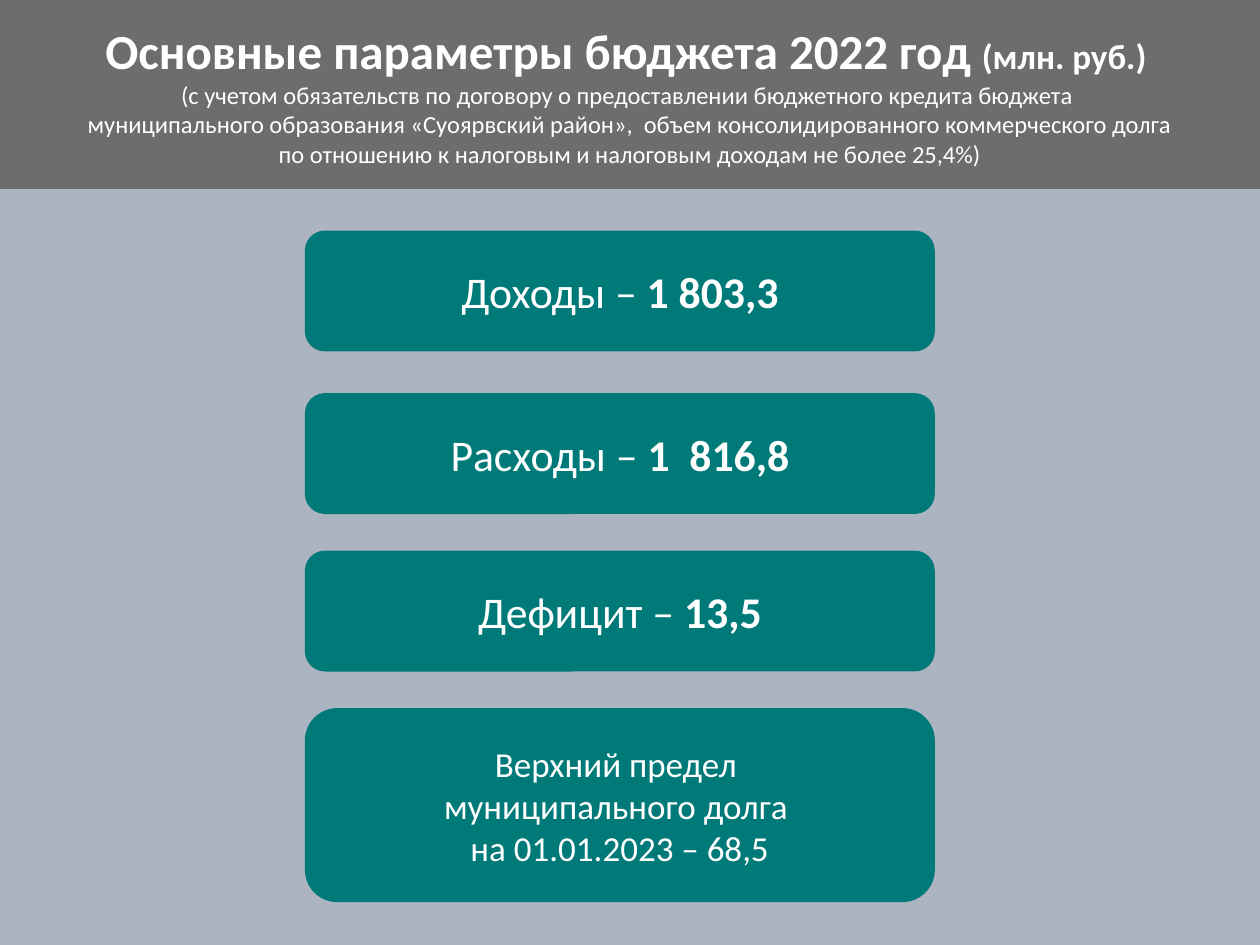
from pptx import Presentation
from pptx.dml.color import RGBColor
from pptx.enum.shapes import MSO_SHAPE
from pptx.enum.text import MSO_ANCHOR, MSO_AUTO_SIZE, PP_ALIGN
from pptx.util import Inches, Pt

FONT = "Calibri"
WHITE, GREY, TEAL, BACKGROUND = "FFFFFF", "6D6D6D", "007979", "ACB3C1"
CARD_LEFT, CARD_WIDTH = 2.42, 5

# Each paragraph is a list of runs: (text, size, bold)
TITLE = [
    [("Основные параметры бюджета 2022 год ", 28, True), ("(млн. руб.) ", 20, True)],
    [("(с учетом обязательств по договору о предоставлении бюджетного кредита бюджета ", 14, False)],
    [(" муниципального образования «Суоярвский район»,  "
      "объем консолидированного коммерческого долга ", 14, False)],
    [("по отношению к налоговым и налоговым доходам не более 25,4%)", 14, False)],
]

# Each card: top, height, paragraphs
CARDS = [
    (1.83, 0.96, [[("Доходы – ", 25, False), ("1 803,3", 25, True)]]),
    (3.12, 0.96, [[("Расходы – ", 25, False), ("1  816,8", 25, True)]]),
    (4.37, 0.96, [[("Дефицит – ", 25, False), ("13,5", 25, True)]]),
    (5.62, 1.54, [
        [("Верхний предел ", 20, False)],
        [("муниципального долга ", 20, False)],
        [("на 01.01.2023 – 68,5", 20, False)],
    ]),
]


def paint(fill, color):
    fill.solid()
    fill.fore_color.rgb = RGBColor.from_string(color)


def write(text_frame, paragraphs):
    text_frame.vertical_anchor = MSO_ANCHOR.MIDDLE
    for index, runs in enumerate(paragraphs):
        paragraph = text_frame.add_paragraph() if index else text_frame.paragraphs[0]
        paragraph.alignment = PP_ALIGN.CENTER
        for text, size, bold in runs:
            run = paragraph.add_run()
            run.text = text
            run.font.name = FONT
            run.font.size = Pt(size)
            run.font.bold = bold
            run.font.color.rgb = RGBColor.from_string(WHITE)


def add_header(slide, width):
    title = slide.shapes.title
    title.left, title.top = 0, 0
    title.width, title.height = width, Inches(1.5)
    paint(title.fill, GREY)
    title.text_frame.auto_size = MSO_AUTO_SIZE.NONE
    title.text_frame.word_wrap = True
    write(title.text_frame, TITLE)


def add_card(slide, top, height, paragraphs):
    card = slide.shapes.add_shape(
        MSO_SHAPE.ROUNDED_RECTANGLE,
        Inches(CARD_LEFT), Inches(top), Inches(CARD_WIDTH), Inches(height))
    card.shadow.inherit = False
    card.line.fill.background()
    paint(card.fill, TEAL)
    frame = card.text_frame
    frame.margin_left = frame.margin_right = frame.margin_top = frame.margin_bottom = 0
    frame.word_wrap = False
    write(frame, paragraphs)


def main():
    presentation = Presentation()
    presentation.slide_width, presentation.slide_height = Inches(10), Inches(7.5)
    slide = presentation.slides.add_slide(presentation.slide_layouts[5])
    paint(slide.background.fill, BACKGROUND)

    # Header band, then the budget figures
    add_header(slide, presentation.slide_width)
    for top, height, paragraphs in CARDS:
        add_card(slide, top, height, paragraphs)

    presentation.save("out.pptx")


if __name__ == "__main__":
    main()
